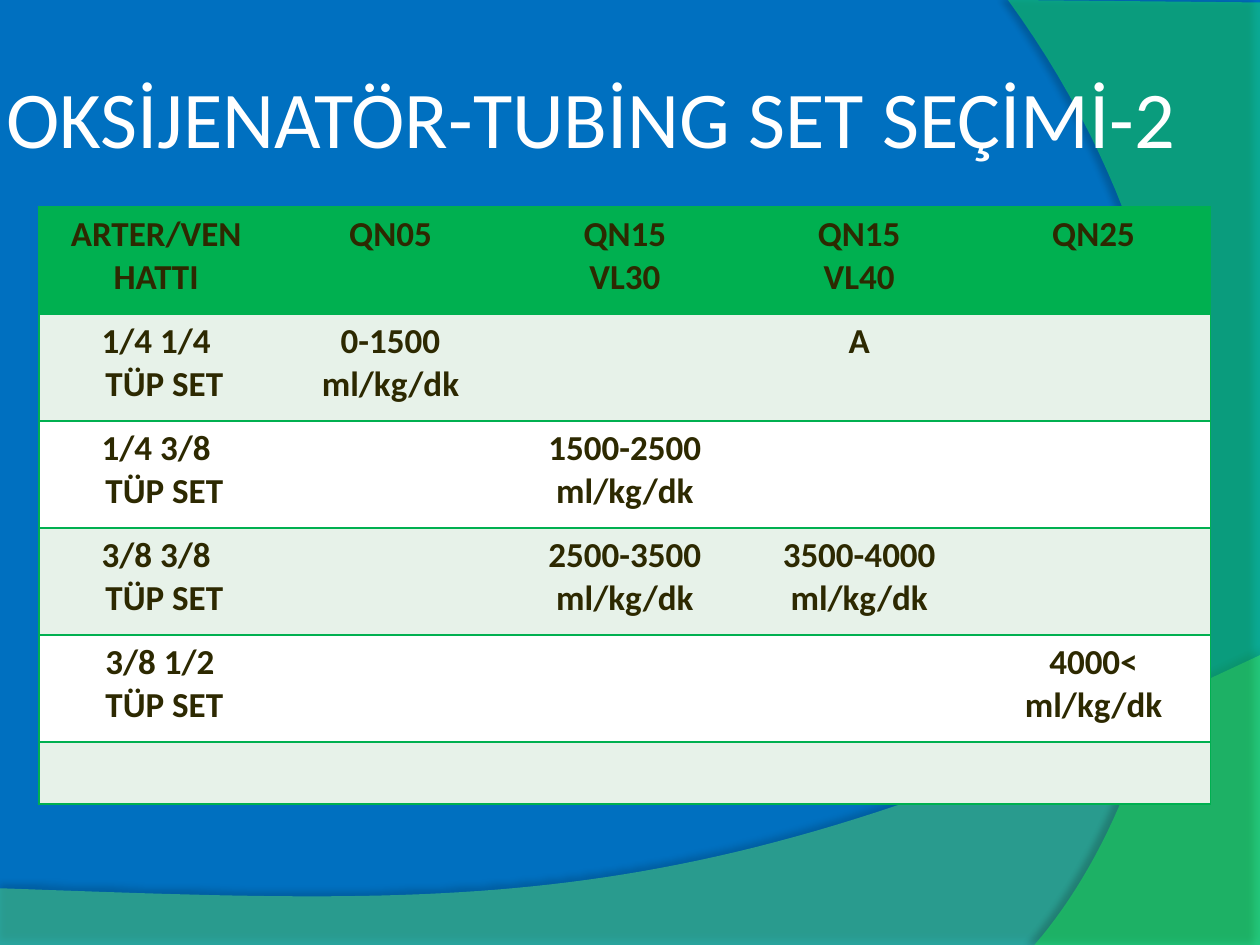
from lxml import etree
from pptx import Presentation
from pptx.dml.color import RGBColor
from pptx.enum.text import MSO_ANCHOR, PP_ALIGN
from pptx.oxml.ns import qn
from pptx.util import Inches, Pt

LEFT, CENTER, MIDDLE = PP_ALIGN.LEFT, PP_ALIGN.CENTER, MSO_ANCHOR.MIDDLE
TITLE_ONLY = 5
WIDTH, HEIGHT = 10, 7.5

BLUE, GREEN, PALE, WHITE, INK = "0070C0", "00B050", "E7F2E9", "FFFFFF", "2D2901"
TITLE_FONT = {"name": "Calibri", "size": Pt(46), "bold": False}
CELL_FONT = {"name": "Calibri", "size": Pt(20), "bold": True}

COLUMN_WIDTH, ROW_HEIGHT, LAST_ROW_HEIGHT = 1.86, 0.85, 0.49
LINE_INDENTS = {"TÜP SET": 0.13, "3/8 1/2": 0.06}
ROWS = [
    ["ARTER/VEN\nHATTI", "QN05", "QN15\nVL30", "QN15\nVL40", "QN25"],
    ["1/4 1/4\nTÜP SET", "0-1500 ml/kg/dk", "", "A", ""],
    ["1/4 3/8\nTÜP SET", "", "1500-2500\nml/kg/dk", "", ""],
    ["3/8 3/8\nTÜP SET", "", "2500-3500\nml/kg/dk", "3500-4000 ml/kg/dk", ""],
    ["3/8 1/2\nTÜP SET", "", "", "", "4000<\nml/kg/dk"],
    [""] * 5,
]


def color(value):
    return RGBColor.from_string(value)


def add_element(parent, tag, **attributes):
    values = {key: str(value) for key, value in attributes.items()}
    return etree.SubElement(parent, qn(tag), values)


def format_font(font, values, ink):
    for key, value in values.items():
        setattr(font, key, value)
    font.color.rgb = color(ink)


def bezier(start, control_1, control_2, end, steps=60):
    """Points along a cubic curve, without its start."""
    points = []
    for step in range(1, steps + 1):
        t = step / steps
        weights = ((1 - t) ** 3, 3 * t * (1 - t) ** 2, 3 * t * t * (1 - t), t ** 3)
        curve = (start, control_1, control_2, end)
        points.append(tuple(sum(w * p[axis] for w, p in zip(weights, curve))
                            for axis in (0, 1)))
    return points


def add_wave(slide, points, fill, opacity, shade, distance, direction):
    """Translucent wave with a soft shadow; opacities are in percent."""
    # The builder rounds its coordinates, so they are given in EMU
    outline = [(Inches(x), Inches(y)) for x, y in points]
    builder = slide.shapes.build_freeform(*outline[0])
    builder.add_line_segments(outline[1:], close=True)
    wave = builder.convert_to_shape()
    wave.fill.solid()
    wave.fill.fore_color.rgb = color(fill)
    wave.line.fill.background()
    wave.shadow.inherit = False
    properties = wave._element.spPr
    fill_color = properties.find(qn("a:solidFill")).find(qn("a:srgbClr"))
    add_element(fill_color, "a:alpha", val=opacity * 1000)
    shadow = add_element(properties.find(qn("a:effectLst")), "a:outerShdw",
                         blurRad=Pt(4), dist=Pt(distance),
                         dir=direction * 60000, rotWithShape=0)
    shadow_color = add_element(shadow, "a:srgbClr", val="000000")
    add_element(shadow_color, "a:alpha", val=shade * 1000)


def add_title(slide, text):
    title = slide.shapes.title
    place = {"left": 0, "top": 0.04 * HEIGHT,
             "width": 0.98 * WIDTH, "height": HEIGHT / 6}
    for key, value in place.items():
        setattr(title, key, Inches(value))
    frame = title.text_frame
    frame.text = text
    frame.vertical_anchor = MIDDLE
    for side in ("left", "right", "top", "bottom"):
        setattr(frame, f"margin_{side}", Inches(0.05))
    paragraph = frame.paragraphs[0]
    paragraph.alignment = LEFT
    format_font(paragraph.runs[0].font, TITLE_FONT, WHITE)


def set_borders(cell, visible):
    properties = cell._tc.get_or_add_tcPr()
    for side in "LRTB":
        line = add_element(properties, f"a:ln{side}", w=Pt(1))
        if side in visible:
            fill = add_element(line, "a:solidFill")
            add_element(fill, "a:srgbClr", val=GREEN)
        else:
            add_element(line, "a:noFill")


def fill_cell(cell, text, background, visible_borders):
    set_borders(cell, visible_borders)
    cell.fill.solid()
    cell.fill.fore_color.rgb = color(background)
    cell.text = text
    for paragraph in cell.text_frame.paragraphs:
        paragraph.alignment = CENTER
        for run in paragraph.runs:
            format_font(run.font, CELL_FONT, INK)
        indent = LINE_INDENTS.get(paragraph.text)
        if indent:
            paragraph._p.get_or_add_pPr().set("marL", str(Inches(indent)))


def add_selection_table(slide, left, top):
    columns = len(ROWS[0])
    heights = [ROW_HEIGHT] * (len(ROWS) - 1) + [LAST_ROW_HEIGHT]
    table = slide.shapes.add_table(
        len(ROWS), columns, Inches(left), Inches(top),
        Inches(columns * COLUMN_WIDTH), Inches(sum(heights))).table
    for row, height in zip(table.rows, heights):
        row.height = Inches(height)
    for r, texts in enumerate(ROWS):
        background = GREEN if r == 0 else (PALE if r % 2 else WHITE)
        for c, text in enumerate(texts):
            borders = "TB" + "L" * (c == 0) + "R" * (c == columns - 1)
            fill_cell(table.cell(r, c), text, background, borders)


def main():
    presentation = Presentation()
    presentation.slide_width = Inches(WIDTH)
    presentation.slide_height = Inches(HEIGHT)
    slide = presentation.slides.add_slide(presentation.slide_layouts[TITLE_ONLY])
    slide.background.fill.solid()
    slide.background.fill.fore_color.rgb = color(BLUE)

    # Background waves
    bottom_curve = bezier((WIDTH, 5.2), (5.59, 7.29), (3.91, 7.19), (0, 7.05))
    add_wave(slide, [(0, 7.05), (0, HEIGHT), (WIDTH, HEIGHT), (WIDTH, 5.2)]
             + bottom_curve, "5CE679", 45, 35, 3.5, 270)
    side_curve = bezier((8.21, HEIGHT), (9.35, 6.19), (10.18, 3), (8, 0))
    add_wave(slide, [(WIDTH, 0.02), (WIDTH, HEIGHT), (8.21, HEIGHT)]
             + side_curve, "19FF50", 40, 45, 4, 180)

    # Title goes in front of the waves
    title = slide.shapes.title._element
    title.getparent().append(title)
    add_title(slide, "OKSİJENATÖR-TUBİNG SET SEÇİMİ-2")

    # Oxygenator and tubing set choices
    add_selection_table(slide, 0.31, 1.64)
    presentation.save("out.pptx")


if __name__ == "__main__":
    main()
